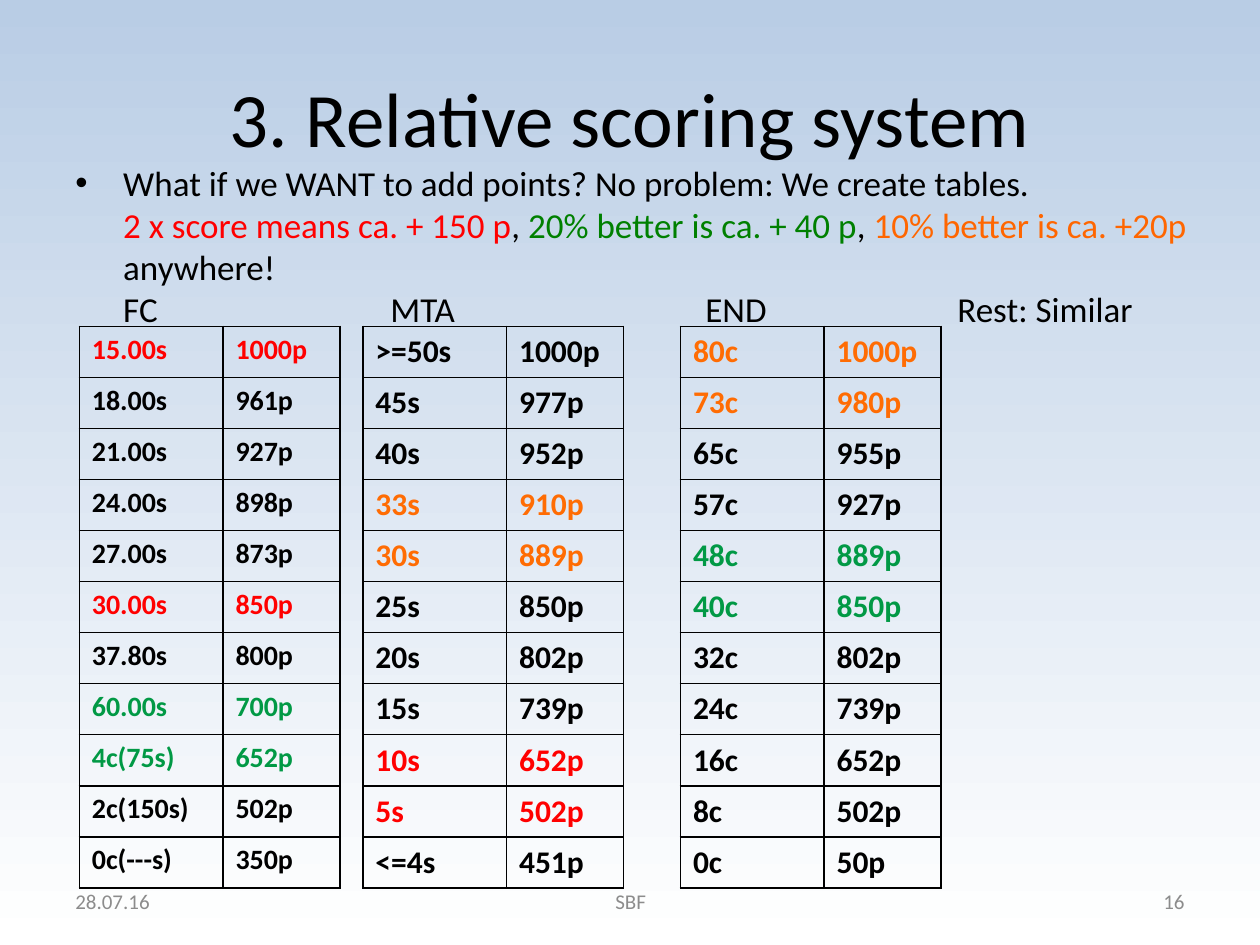
from pptx import Presentation
from pptx.dml.color import RGBColor
from pptx.enum.text import MSO_ANCHOR, PP_ALIGN
from pptx.oxml.ns import qn
from pptx.util import Inches, Pt
from lxml import etree

LEFT, CENTER, RIGHT = PP_ALIGN.LEFT, PP_ALIGN.CENTER, PP_ALIGN.RIGHT
TOP, MIDDLE = MSO_ANCHOR.TOP, MSO_ANCHOR.MIDDLE

BLACK, RED, GREEN, ORANGE = "000000", "FF0000", "019945", "FF6C03"
TEXT_GREEN, TEXT_ORANGE, GREY = "008000", "FF6600", "8C8C8C"
SKY, WHITE = "B9CDE5", "FFFFFF"

TITLE = "3. Relative scoring system"
INTRO = [
    [("What if we WANT to add points? No problem: We create tables.", BLACK)],
    [("2 x score means ca. + 150 p", RED), (", ", BLACK),
     ("20% better is ca. + 40 p", TEXT_GREEN), (", ", BLACK),
     ("10% better is ca. +20p", TEXT_ORANGE)],
    [("anywhere!", BLACK)],
    [("FC\tMTA\tEND\tRest: Similar", BLACK)],
]
HEADING_TABS = [2.5, 5, 7]

SCORES = [
    {"left": 0.63, "size": 16, "rows": [
        ("15.00s", "1000p", RED), ("18.00s", "961p", BLACK),
        ("21.00s", "927p", BLACK), ("24.00s", "898p", BLACK),
        ("27.00s", "873p", BLACK), ("30.00s", "850p", RED),
        ("37.80s", "800p", BLACK), ("60.00s", "700p", GREEN),
        ("4c(75s)", "652p", GREEN), ("2c(150s)", "502p", BLACK),
        ("0c(---s)", "350p", BLACK)]},
    {"left": 2.88, "size": 18, "rows": [
        (">=50s", "1000p", BLACK), ("45s", "977p", BLACK),
        ("40s", "952p", BLACK), ("33s", "910p", ORANGE),
        ("30s", "889p", ORANGE), ("25s", "850p", BLACK),
        ("20s", "802p", BLACK), ("15s", "739p", BLACK),
        ("10s", "652p", RED), ("5s", "502p", RED),
        ("<=4s", "451p", BLACK)]},
    {"left": 5.4, "size": 18, "rows": [
        ("80c", "1000p", ORANGE), ("73c", "980p", ORANGE),
        ("65c", "955p", BLACK), ("57c", "927p", BLACK),
        ("48c", "889p", GREEN), ("40c", "850p", GREEN),
        ("32c", "802p", BLACK), ("24c", "739p", BLACK),
        ("16c", "652p", BLACK), ("8c", "502p", BLACK),
        ("0c", "50p", BLACK)]},
]
TABLE_TOP, TABLE_HEIGHT = 2.59, 4.46
COLUMN_WIDTHS = [1.14, 0.93]

FOOTER = [("28.07.16", 0.5, 2.33, LEFT), ("SBF", 3.42, 3.17, CENTER),
          ("16", 7.17, 2.33, RIGHT)]


def rgb(color):
    return RGBColor.from_string(color)


def write(paragraph, text, size=20, color=BLACK, bold=False, align=LEFT):
    paragraph.alignment = align
    run = paragraph.add_run()
    run.text = text
    font = run.font
    font.name, font.size, font.bold = "Calibri", Pt(size), bold
    font.color.rgb = rgb(color)


def add_box(slide, left, top, width, height, anchor=TOP):
    box = slide.shapes.add_textbox(*map(Inches, (left, top, width, height)))
    box.text_frame.word_wrap = True
    box.text_frame.vertical_anchor = anchor
    return box.text_frame.paragraphs[0]


def add_bullet_and_tabs(paragraph, indent, stops):
    props = paragraph._p.get_or_add_pPr()
    props.set("marL", str(Inches(indent)))
    props.set("indent", str(-Inches(indent)))
    etree.SubElement(props, qn("a:buFont"), typeface="Arial")
    etree.SubElement(props, qn("a:buChar"), char="•")
    tabs = etree.SubElement(props, qn("a:tabLst"))
    for stop in stops:
        etree.SubElement(tabs, qn("a:tab"), pos=str(Inches(stop)), algn="l")


def add_borders(cell):
    props = cell._tc.get_or_add_tcPr()
    for side in ("lnL", "lnR", "lnT", "lnB"):
        line = etree.SubElement(props, qn(f"a:{side}"), w=str(Pt(1)))
        fill = etree.SubElement(line, qn("a:solidFill"))
        etree.SubElement(fill, qn("a:srgbClr"), val=BLACK)


def add_scores(slide, left, size, rows):
    table = slide.shapes.add_table(
        len(rows), len(COLUMN_WIDTHS), Inches(left), Inches(TABLE_TOP),
        Inches(sum(COLUMN_WIDTHS)), Inches(TABLE_HEIGHT)).table
    table.first_row = table.horz_banding = False
    for column, width in zip(table.columns, COLUMN_WIDTHS):
        column.width = Inches(width)
    for r, (result, points, color) in enumerate(rows):
        for c, text in enumerate((result, points)):
            cell = table.cell(r, c)
            add_borders(cell)
            cell.fill.background()
            write(cell.text_frame.paragraphs[0], text, size=size,
                  color=color, bold=True)


def main():
    deck = Presentation()
    deck.slide_width, deck.slide_height = Inches(10), Inches(7.5)
    slide = deck.slides.add_slide(deck.slide_layouts[6])

    backdrop = slide.background.fill
    backdrop.gradient()
    backdrop.gradient_angle = 270
    for stop, color in zip(backdrop.gradient_stops, (SKY, WHITE)):
        stop.color.rgb = rgb(color)

    write(add_box(slide, 0.5, 0.3, 9, 1.25, MIDDLE), TITLE, size=44, align=CENTER)

    intro = add_box(slide, 0.5, 1.23, 9.27, 4.95)
    add_bullet_and_tabs(intro, 0.38, HEADING_TABS)
    for i, line in enumerate(INTRO):
        if i:
            intro.add_line_break()
        for text, color in line:
            write(intro, text, color=color)

    for scores in SCORES:
        add_scores(slide, **scores)

    for text, left, width, align in FOOTER:
        write(add_box(slide, left, 6.95, width, 0.4, MIDDLE), text, size=12,
              color=GREY, align=align)

    deck.save("out.pptx")


if __name__ == "__main__":
    main()
